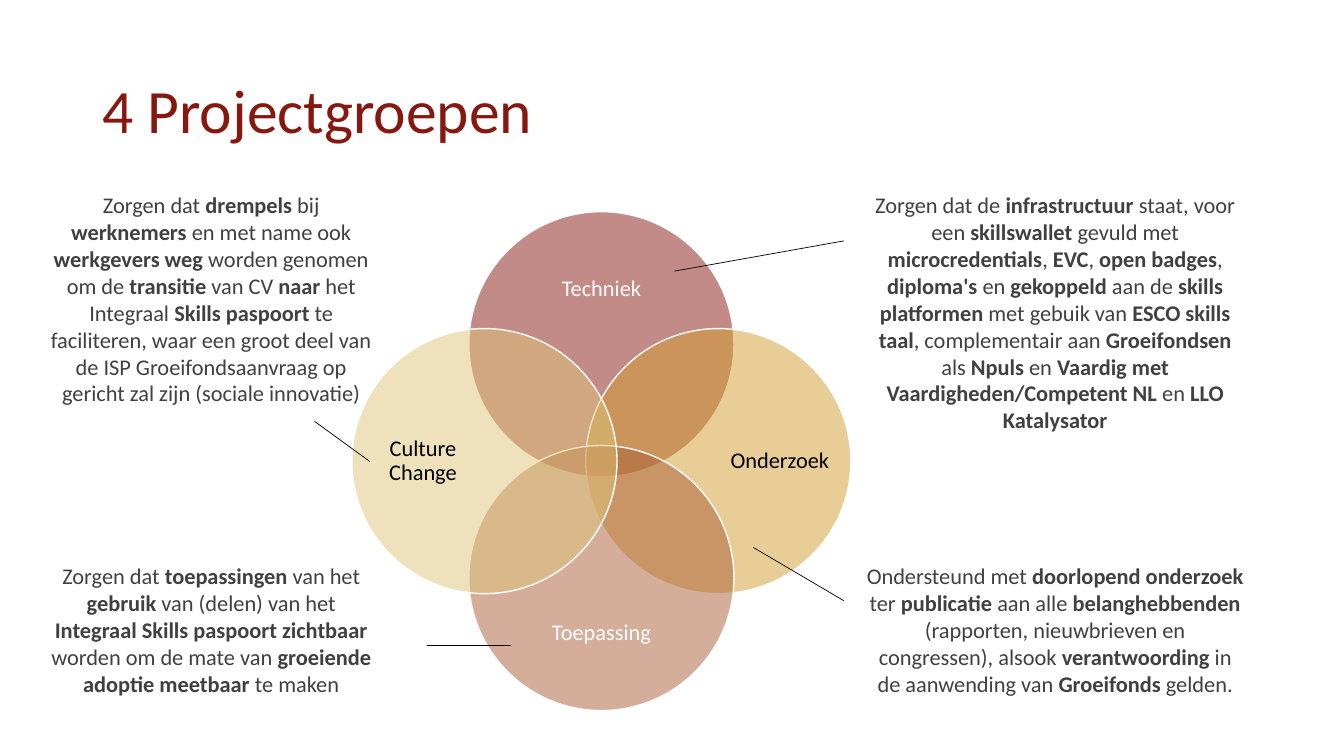
from lxml import etree
from pptx import Presentation
from pptx.dml.color import RGBColor
from pptx.enum.shapes import MSO_CONNECTOR, MSO_SHAPE
from pptx.enum.text import MSO_ANCHOR, PP_ALIGN
from pptx.oxml.ns import qn
from pptx.util import Inches, Pt

OVAL = MSO_SHAPE.OVAL
LINE = MSO_CONNECTOR.STRAIGHT
TOP, MIDDLE = MSO_ANCHOR.TOP, MSO_ANCHOR.MIDDLE
LEFT, CENTER = PP_ALIGN.LEFT, PP_ALIGN.CENTER

THEME = {
    "font": "Calibri", "head": 44, "body": 16,
    "title": "871810", "text": "404040", "white": "FFFFFF", "black": "000000",
    "techniek": "871810", "onderzoek": "D59D30",
    "toepassing": "AB5F38", "culture": "DEC478",
}

TITLE = "4 Projectgroepen"

GROUPS = [
    ("Techniek", "techniek", "white", 0, -1),
    ("Onderzoek", "onderzoek", "black", 1, 0),
    ("Toepassing", "toepassing", "white", 0, 1),
    ("Culture Change", "culture", "black", -1, 0),
]

LEFT_COL, RIGHT_COL = (0.33, 3.53), (8.49, 3.95)
UPPER, LOWER = (1.85, 2.52), (5.53, 1.45)

NOTES = [
    (RIGHT_COL, UPPER,
     "Zorgen dat de *infrastructuur *staat, voor een *skillswallet* gevuld met "
     "*microcredentials*, *EVC*, *open badges*, *diploma's *en *gekoppeld *aan de "
     "*skills platformen *met gebuik van *ESCO skills taal*, complementair aan "
     "*Groeifondsen* als *Npuls* en *Vaardig met Vaardigheden/Competent NL *en "
     "*LLO Katalysator*"),
    (LEFT_COL, LOWER,
     "Zorgen dat *toepassingen* van het *gebruik* van (delen) van het "
     "*Integraal Skills paspoort zichtbaar* worden om de mate van "
     "*groeiende adoptie meetbaar* te maken"),
    (LEFT_COL, UPPER,
     "Zorgen dat *drempels* bij *werknemers *en met name ook *werkgevers weg* "
     "worden genomen om de *transitie* van CV *naar* het Integraal "
     "*Skills paspoort* te faciliteren, waar een groot deel van de ISP "
     "Groeifondsaanvraag op gericht zal zijn (sociale innovatie)"),
    (RIGHT_COL, LOWER,
     "Ondersteund met *doorlopend onderzoek* ter *publicatie *aan alle "
     "*belanghebbenden* (rapporten, nieuwbrieven en congressen), alsook "
     "*verantwoording* in de aanwending van *Groeifonds* gelden."),
]

LINKS = [
    (6.69, 2.69, 8.37, 2.39),
    (4.24, 6.4, 5.07, 6.4),
    (3.12, 4.18, 3.67, 4.58),
    (7.47, 5.43, 8.37, 5.96),
]

MID_X, MID_Y = 5.965, 4.575
SIZE, STEP = 2.63, 1.16
LONG = 2.02


def tint(name):
    return RGBColor.from_string(THEME[name])


def add_text(slide, box, text, color, size="body", align=CENTER,
             anchor=TOP, space=None, inset=None):
    frame = slide.shapes.add_textbox(*map(Inches, box)).text_frame
    frame.word_wrap = True
    frame.vertical_anchor = anchor
    if inset is not None:
        frame.margin_left = frame.margin_right = Inches(inset)
        frame.margin_top = frame.margin_bottom = Inches(inset)
    para = frame.paragraphs[0]
    para.alignment = align
    para.line_spacing = space
    for i, part in enumerate(text.split("*")):
        if part:
            run = para.add_run()
            run.text = part
            run.font.name = THEME["font"]
            run.font.size = Pt(THEME[size])
            run.font.color.rgb = tint(color)
            run.font.bold = i % 2 == 1


def add_circle(slide, x, y, color):
    box = (x - SIZE / 2, y - SIZE / 2, SIZE, SIZE)
    disc = slide.shapes.add_shape(OVAL, *map(Inches, box))
    disc.shadow.inherit = False
    disc.fill.solid()
    disc.fill.fore_color.rgb = tint(color)
    shade = disc.element.spPr.find(qn("a:solidFill"))[0]
    etree.SubElement(shade, qn("a:alpha")).set("val", "50000")
    disc.line.color.rgb = tint("white")
    disc.line.width = Pt(1)


def add_link(slide, ends):
    link = slide.shapes.add_connector(LINE, *map(Inches, ends))
    link.line.color.rgb = tint("black")
    link.line.width = Pt(0.5)
    etree.SubElement(link.element.spPr, qn("a:effectLst"))


def main():
    deck = Presentation()
    deck.slide_width, deck.slide_height = Inches(13.33), Inches(7.5)
    slide = deck.slides.add_slide(deck.slide_layouts[6])

    add_text(slide, (0.92, 0.4, 10.83, 1.45), TITLE, "title", "head",
             LEFT, MIDDLE, 0.9)

    for label, color, ink, dx, dy in GROUPS:
        add_circle(slide, MID_X + dx * STEP, MID_Y + dy * STEP, color)
        wide, high, reach = (1.01, LONG, 1.77) if dx else (LONG, 0.83, 1.71)
        box = (MID_X + dx * reach - wide / 2,
               MID_Y + dy * reach - high / 2, wide, high)
        add_text(slide, box, label, ink, anchor=MIDDLE, space=0.9, inset=0)

    for (x, wide), (y, high), text in NOTES:
        add_text(slide, (x, y, wide, high), text, "text")

    for ends in LINKS:
        add_link(slide, ends)

    deck.save("out.pptx")


if __name__ == "__main__":
    main()
